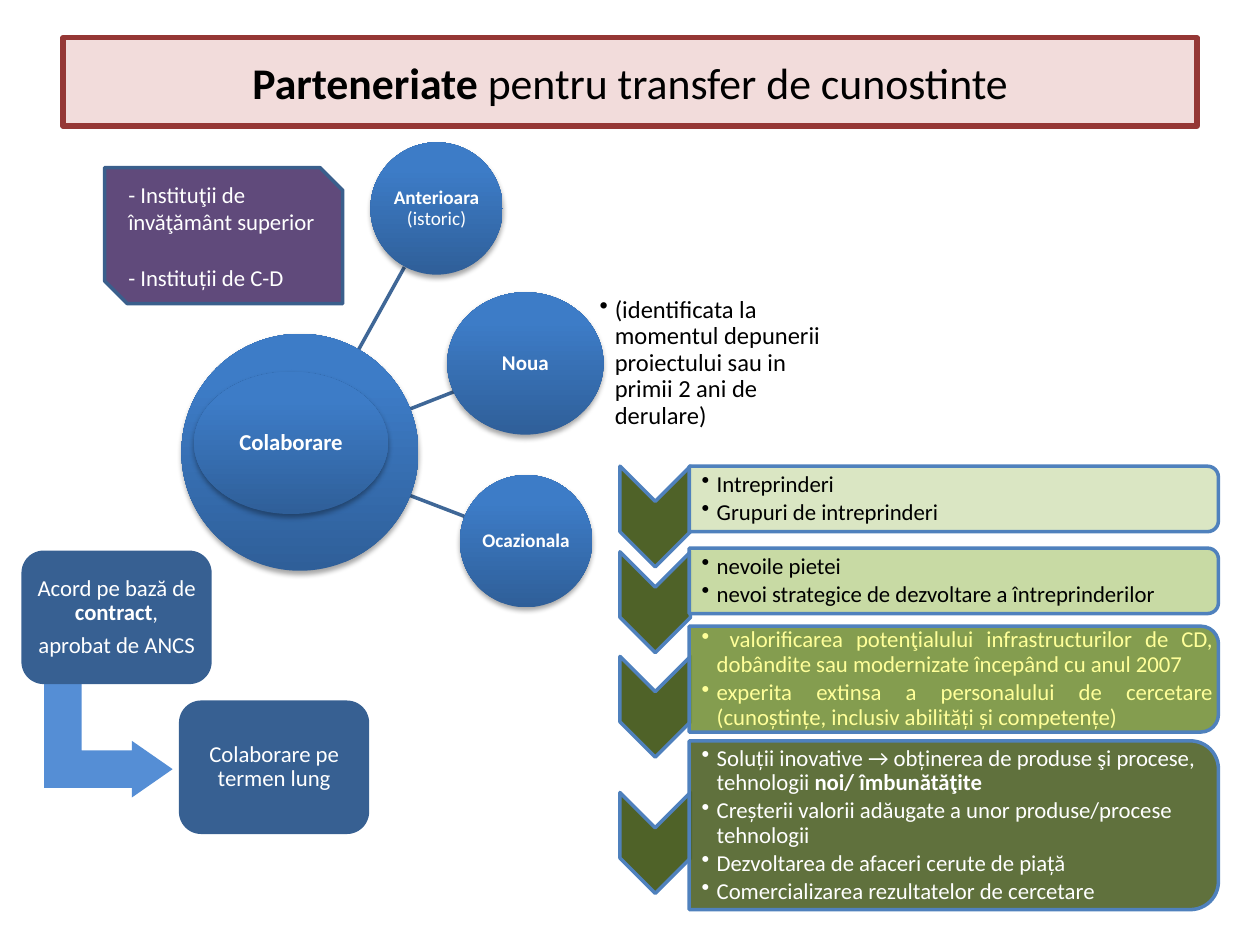
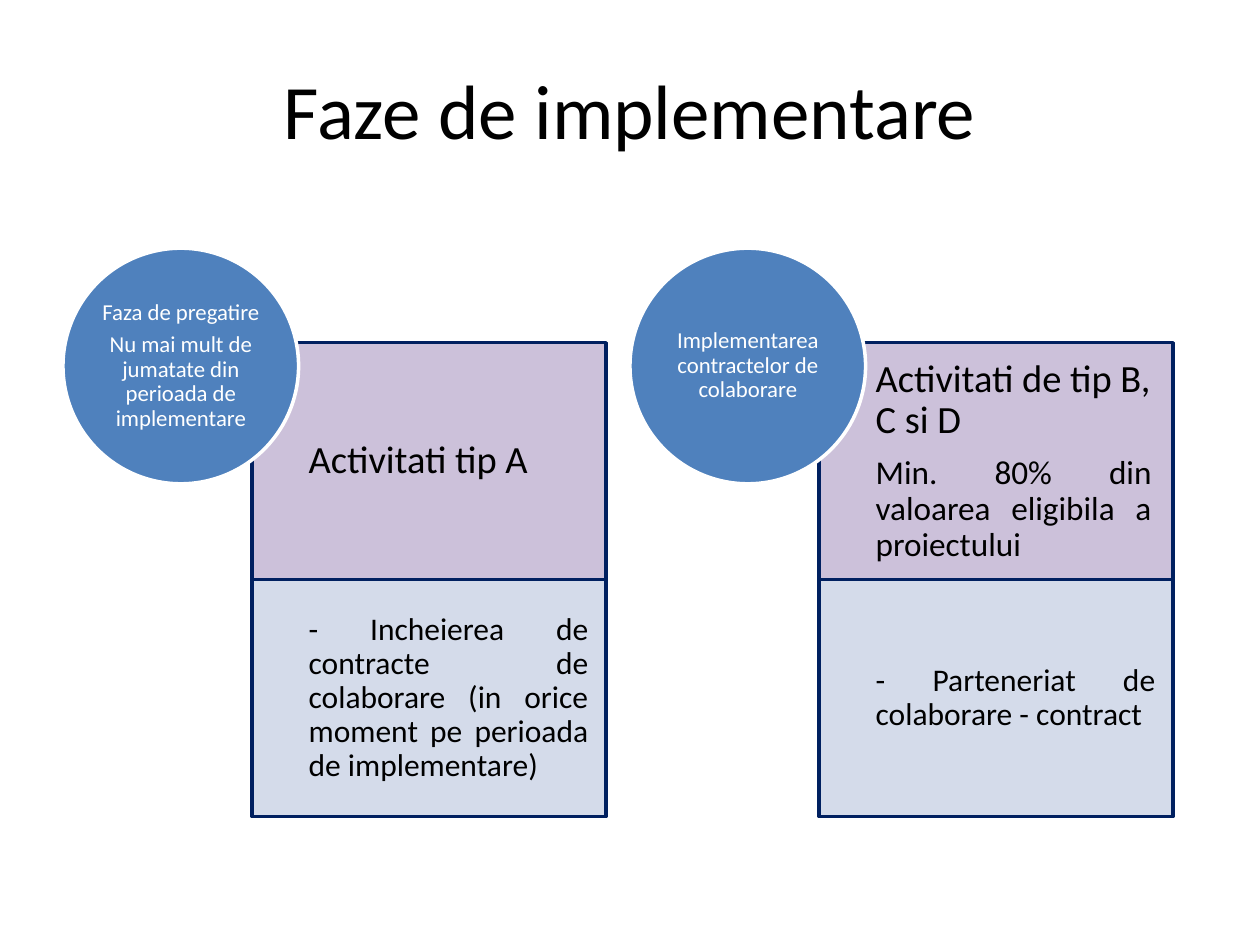
"""Build two slides on partnerships for knowledge transfer and their phases."""
from lxml import etree
from pptx import Presentation
from pptx import util as u
from pptx.dml.color import RGBColor
from pptx.enum import shapes, text
from pptx.oxml import ns

FONT = "Calibri"
KIND = shapes.MSO_SHAPE
ALIGN = text.PP_ALIGN
COLORS = {
    "black": "000000", "white": "FFFFFF", "yellow": "FFFF99",
    "title fill": "F2DCDB", "title line": "953735",
    "ball low": "2F5F99", "ball high": "3D7CC7", "spoke": "3F6797",
    "purple": "604A7B", "purple line": "3A5F8C",
    "olive": "4F6228", "green": "77933C", "light green": "C3D69B", "pale green": "D7E4BD",
    "blue": "4F81BD", "arrow": "558ED5", "box": "376092",
    "lilac": "CCC1DA", "pale blue": "D0D8E8", "navy": "002060",
}
RGB = {name: RGBColor.from_string(value) for name, value in COLORS.items()}


def draw(page, kind, place, fill, line=None, turn=0, alpha=100):
    box = page.shapes.add_shape(kind, *map(u.Inches, place))
    box.shadow.inherit = False
    box.rotation = turn
    box.fill.solid()
    box.fill.fore_color.rgb = RGB[fill]
    if alpha < 100:
        solid = box._element.spPr.find(ns.qn("a:solidFill"))
        etree.SubElement(solid[0], ns.qn("a:alpha"), val=str(alpha * 1000))
    if line:
        box.line.color.rgb = RGB[line]
        box.line.width = u.Pt(2)
    else:
        box.line.fill.background()
    return box


def write(box, lines, size, color, align=ALIGN.CENTER, insets=(0.01,) * 4,
          after=0.35, spacing=0.9, bullets=False):
    frame = box.text_frame
    frame.word_wrap = True
    frame.vertical_anchor = text.MSO_ANCHOR.MIDDLE
    frame.margin_left, frame.margin_top, frame.margin_right, frame.margin_bottom = map(u.Inches, insets)
    for index, line in enumerate(lines):
        para = frame.add_paragraph() if index else frame.paragraphs[0]
        if bullets:
            properties = para._p.get_or_add_pPr()
            properties.set("marL", str(u.Inches(0.12)))
            properties.set("indent", str(u.Inches(-0.12)))
            etree.SubElement(properties, ns.qn("a:buChar"), char="•")
        para.alignment = align
        para.line_spacing = spacing
        para.space_after = u.Pt(size * after)
        para.font.name = FONT
        para.font.size = u.Pt(size)
        para.font.color.rgb = RGB[color]
        for position, part in enumerate(line.split("**")):
            if part:
                span = para.add_run()
                span.text = part
                if position % 2:
                    span.font.bold = True


deck = Presentation()
deck.slide_width, deck.slide_height = u.Inches(10), u.Inches(7.5)
titles = [("**Parteneriate** pentru transfer de cunostinte", 25, 0.7), ("Faze de implementare", 44, 1.12)]
for wording, size, height in titles:
    page = deck.slides.add_slide(deck.slide_layouts[5])
    title = page.shapes.title
    title.left, title.top, title.width, title.height = map(u.Inches, (0.5, 0.3, 9, height))
    write(title, [wording], size, "black", after=0, spacing=1)
partners, phases = deck.slides

title = partners.shapes.title
title.fill.solid()
title.fill.fore_color.rgb = RGB["title fill"]
title.line.color.rgb = RGB["title line"]
title.line.width = u.Pt(3)

for ends in [(3.04, 3.85, 3.69, 4.1), (3.04, 3.33, 3.6, 3.11), (2.76, 2.93, 3.21, 2.12)]:
    spoke = partners.shapes.add_connector(shapes.MSO_CONNECTOR.STRAIGHT, *map(u.Inches, ends))
    spoke.line.color.rgb = RGB["spoke"]
    spoke.line.width = u.Pt(2)
    etree.SubElement(spoke._element.spPr, ns.qn("a:effectLst"))

balls = [
    ((1.44, 2.65, 1.88, 1.88), None, 0),
    ((2.94, 1.13, 1.05, 1.05), "**Anterioara** (istoric)", 11),
    ((3.55, 2.32, 1.24, 1.13), "**Noua**", 12),
    ((3.65, 3.77, 1.05, 1.05), "**Ocazionala**", 11),
    ((1.54, 2.95, 1.54, 1.13), "**Colaborare**", 13),
]
for place, wording, size in balls:
    ball = draw(partners, KIND.OVAL, place, "ball high")
    ball.fill.gradient()
    ball.fill.gradient_angle = 90
    for stop, position, color in zip(ball.fill.gradient_stops, (0, 0.8), ("ball low", "ball high")):
        stop.position = position
        stop.color.rgb = RGB[color]
    effects = ball._element.spPr.find(ns.qn("a:effectLst"))
    shadow = etree.SubElement(effects, ns.qn("a:outerShdw"), blurRad=str(u.Pt(3.1)),
                              dist=str(u.Pt(1.8)), dir="5400000", rotWithShape="0")
    shade = etree.SubElement(shadow, ns.qn("a:srgbClr"), val=COLORS["black"])
    etree.SubElement(shade, ns.qn("a:alpha"), val="35000")
    if wording:
        write(ball, [wording], size, "white")

note = partners.shapes.add_textbox(*map(u.Inches, (4.76, 2.32, 1.86, 1.13)))
write(note, ["(identificata la momentul depunerii proiectului sau in primii 2 ani de derulare)"],
      14, "black", ALIGN.LEFT, (0,) * 4, 0.15, bullets=True)

institutions = draw(partners, KIND.SNIP_2_DIAG_RECTANGLE, (0.83, 1.33, 1.89, 1.08), "purple", "purple line")
write(institutions, ["- Instituţii de învăţământ superior", "- Instituții de C-D"],
      13, "white", ALIGN.LEFT, (0.1, 0.05, 0.1, 0.05), 0, 1)
institutions.text_frame.paragraphs[1].space_before = u.Pt(16)

bars = [
    (3.96, 0.52, 4.1, "pale green", "black", ALIGN.LEFT, ["Intreprinderi", "Grupuri de intreprinderi"]),
    (4.61, 0.52, 4.78, "light green", "black", ALIGN.LEFT,
     ["nevoile pietei", "nevoi strategice de dezvoltare a întreprinderilor"]),
    (5.39, 0.84, 5.61, "green", "yellow", ALIGN.JUSTIFY,
     [" valorificarea potenţialului infrastructurilor de CD, dobândite sau modernizate începând cu anul 2007",
      "experita extinsa a personalului de cercetare (cunoștințe, inclusiv abilități și competențe)"]),
    (6.55, 1.34, 6.69, "olive", "white", ALIGN.LEFT,
     ["Soluții inovative → obținerea de produse şi procese, tehnologii **noi/ îmbunătăţite**",
      "Creșterii valorii adăugate a unor produse/procese tehnologii",
      "Dezvoltarea de afaceri cerute de piață", "Comercializarea rezultatelor de cercetare"]),
]
bar_left, bar_width = 5.47, 4.2
for middle, height, chevron_middle, fill, color, align, items in bars:
    draw(partners, KIND.CHEVRON, (4.8, chevron_middle - 0.28, 0.8, 0.56), "olive", "blue", 90)
    upright = (bar_left + (bar_width - height) / 2, middle - bar_width / 2, height, bar_width)
    draw(partners, KIND.ROUND_2_SAME_RECTANGLE, upright, fill, "blue", 90, 90)
    area = (bar_left, middle - height / 2, bar_width - 0.04, height)
    box = partners.shapes.add_textbox(*map(u.Inches, area))
    write(box, items, 13, color, align, (0.1, 0.01, 0.01, 0.01), 0.15, bullets=True)

arrow = draw(partners, KIND.BENT_UP_ARROW, (0.41, 5.37, 0.9, 1.02), "arrow", turn=90)
for index, value in enumerate((0.33, 0.25, 0.36)):
    arrow.adjustments[index] = value
agreements = [
    (0.17, 4.37, ["Acord pe bază de **contract**,", "aprobat de ANCS"]),
    (1.42, 5.56, ["Colaborare pe termen lung"]),
]
for left, top, lines in agreements:
    box = draw(partners, KIND.ROUNDED_RECTANGLE, (left, top, 1.51, 1.06), "box")
    write(box, lines, 13, "white", insets=(0.05,) * 4)

columns = [
    (["Faza de pregatire", "Nu mai mult de jumatate din perioada de implementare"],
     ["Activitati tip A"],
     "- Incheierea de contracte de colaborare (in orice moment pe perioada de implementare)"),
    (["Implementarea contractelor de colaborare"],
     ["Activitati de tip B, C si D", "Min. 80% din valoarea eligibila a proiectului"],
     "- Parteneriat de colaborare - contract"),
]
for index, (phase, activities, result) in enumerate(columns):
    left = 0.5 + 4.5 * index
    upper = draw(phases, KIND.RECTANGLE, (left + 1.5, 2.72, 2.81, 1.88), "lilac", "navy")
    write(upper, activities, 22, "black", ALIGN.LEFT, (0.45, 0.17, 0.17, 0.17))
    for para in upper.text_frame.paragraphs[1:]:
        para.alignment = ALIGN.JUSTIFY
        para.font.size = u.Pt(19)
    lower = draw(phases, KIND.RECTANGLE, (left + 1.5, 4.6, 2.81, 1.88), "pale blue", "navy", alpha=90)
    write(lower, [result], 18, "black", ALIGN.JUSTIFY, (0.45, 0.14, 0.14, 0.14))
    circle = draw(phases, KIND.OVAL, (left, 1.97, 1.87, 1.87), "blue", "white")
    write(circle, phase, 13, "white", insets=(0,) * 4)

deck.save("out.pptx")
